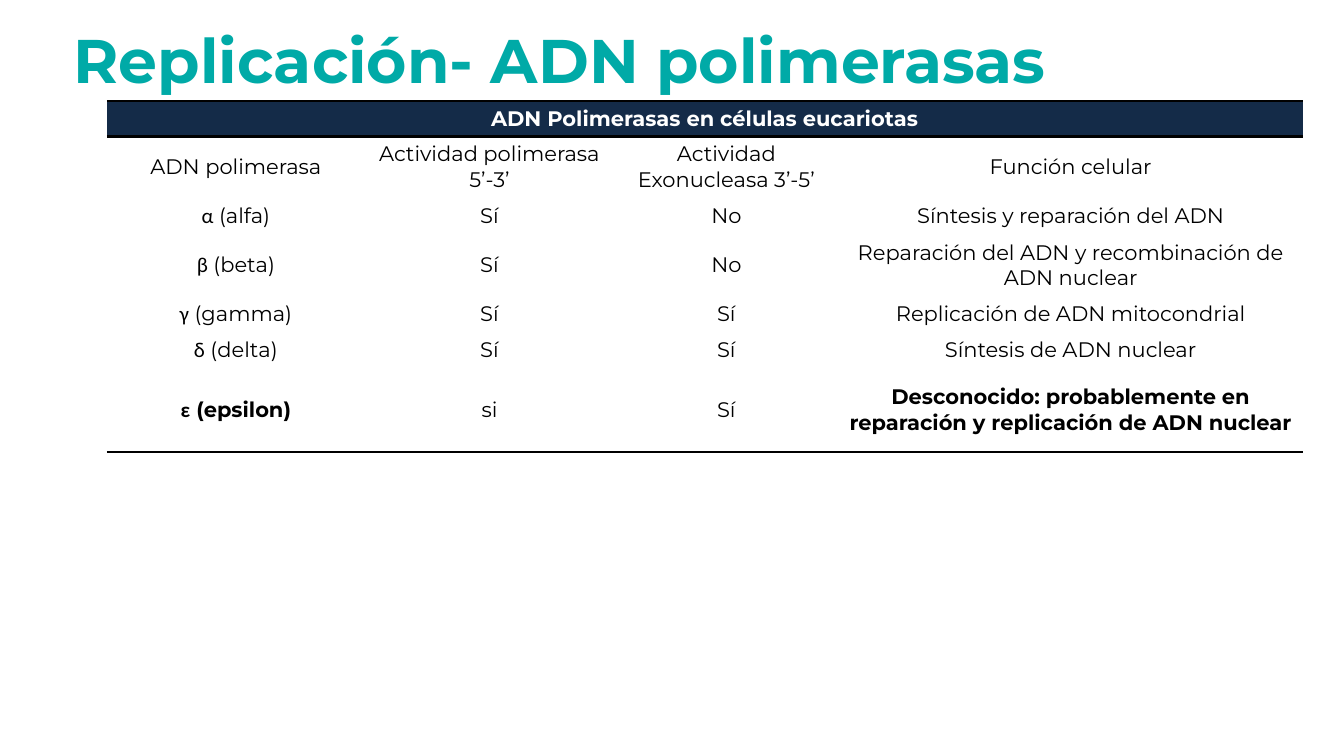
import pptx
import pptx.util
import pptx.dml.color
import pptx.enum.text
import pptx.oxml
import pptx.oxml.ns
from pptx.util import Inches, Pt

COLORS = {"teal": "00AAA7", "navy": "142B48", "white": "FFFFFF", "black": "000000"}
FONT, GREEK_FONT = "Montserrat", "Calibri"
NO_GRID_STYLE = "{2D5ABB26-0587-4C30-8999-92F81FD0307C}"

HEADING = "ADN Polimerasas en células eucariotas"
POLYMERASES = [
    ["ADN polimerasa", "Actividad polimerasa 5’-3’", "Actividad Exonucleasa 3’-5’", "Función celular"],
    ["α (alfa)", "Sí", "No", "Síntesis y reparación del ADN"],
    ["β (beta)", "Sí", "No", "Reparación del ADN y recombinación de ADN nuclear"],
    ["γ (gamma)", "Sí", "Sí", "Replicación de ADN mitocondrial"],
    ["δ (delta)", "Sí", "Sí", "Síntesis de ADN nuclear"],
    ["ε (epsilon)", "si", "Sí", "Desconocido: probablemente en reparación y replicación de ADN nuclear"],
]
COLUMN_WIDTHS = [2.56, 2.47, 2.23, 4.6]
ROW_HEIGHTS = [0.34, 0.58, 0.37, 0.58, 0.34, 0.34, 0.83]


def rgb(name):
    return pptx.dml.color.RGBColor.from_string(COLORS[name])


def style_run(run, size, color, bold, font=FONT):
    run.font.name = font
    run.font.size = Pt(size)
    run.font.bold = bold
    run.font.color.rgb = rgb(color)


def add_border(cell, side):
    cell._tc.get_or_add_tcPr().append(pptx.oxml.parse_xml(
        f'<a:ln{side} {pptx.oxml.ns.nsdecls("a")} w="{Pt(2)}"><a:solidFill>'
        f'<a:srgbClr val="{COLORS["black"]}"/></a:solidFill></a:ln{side}>'))


def fill_cell(cell, text, fill="white", color="black", bold=False, borders=""):
    # Borders come before the fill in the cell properties
    for side in borders:
        add_border(cell, side)
    cell.fill.solid()
    cell.fill.fore_color.rgb = rgb(fill)
    cell.vertical_anchor = pptx.enum.text.MSO_ANCHOR.MIDDLE
    paragraph = cell.text_frame.paragraphs[0]
    paragraph.alignment = pptx.enum.text.PP_ALIGN.CENTER
    paragraph.font.size = Pt(15)
    # A leading Greek letter has its own font
    greek = text[:1] if text[:1] in tuple("αβγδε") else ""
    for part, font in ((greek, GREEK_FONT), (text[len(greek):], FONT)):
        if part:
            run = paragraph.add_run()
            run.text = part
            style_run(run, 15, color, bold, font)


def add_title(slide, left, top, width, height):
    title = slide.shapes.title
    title.left, title.top, title.width, title.height = map(Inches, (left, top, width, height))
    frame = title.text_frame
    frame.text = "Replicación- ADN polimerasas"
    frame.word_wrap = True
    frame.auto_size = pptx.enum.text.MSO_AUTO_SIZE.NONE
    frame.vertical_anchor = pptx.enum.text.MSO_ANCHOR.MIDDLE
    paragraph = frame.paragraphs[0]
    paragraph.alignment = pptx.enum.text.PP_ALIGN.LEFT
    paragraph.line_spacing = 0.9
    style_run(paragraph.runs[0], 44, "teal", True)


def add_polymerase_table(slide, left, top):
    frame = slide.shapes.add_table(
        len(ROW_HEIGHTS), len(COLUMN_WIDTHS), Inches(left), Inches(top),
        Inches(sum(COLUMN_WIDTHS)), Inches(sum(ROW_HEIGHTS)))
    table = frame.table
    table.first_row = table.horz_banding = False
    table._tbl.tblPr.find(pptx.oxml.ns.qn("a:tableStyleId")).text = NO_GRID_STYLE
    for column, width in zip(table.columns, COLUMN_WIDTHS):
        column.width = Inches(width)
    for row, height in zip(table.rows, ROW_HEIGHTS):
        row.height = Inches(height)

    # Heading across all columns
    last_column = len(COLUMN_WIDTHS) - 1
    table.cell(0, 0).merge(table.cell(0, last_column))
    for c in range(last_column + 1):
        fill_cell(table.cell(0, c), "" if c else HEADING, "navy", "white", True, "TB")

    # Column names and polymerases; the last row is closed by a rule
    for r, values in enumerate(POLYMERASES, start=1):
        is_last = r == len(POLYMERASES)
        for c, value in enumerate(values):
            fill_cell(table.cell(r, c), value, bold=is_last and c in (0, last_column),
                      borders="B" if is_last else "")


def main():
    presentation = pptx.Presentation()
    presentation.slide_width, presentation.slide_height = Inches(13.33), Inches(7.5)
    slide = presentation.slides.add_slide(presentation.slide_layouts[5])
    add_title(slide, 0.63, 0.01, 11.06, 1.25)
    add_polymerase_table(slide, 1.06, 1)
    presentation.save("out.pptx")


if __name__ == "__main__":
    main()
